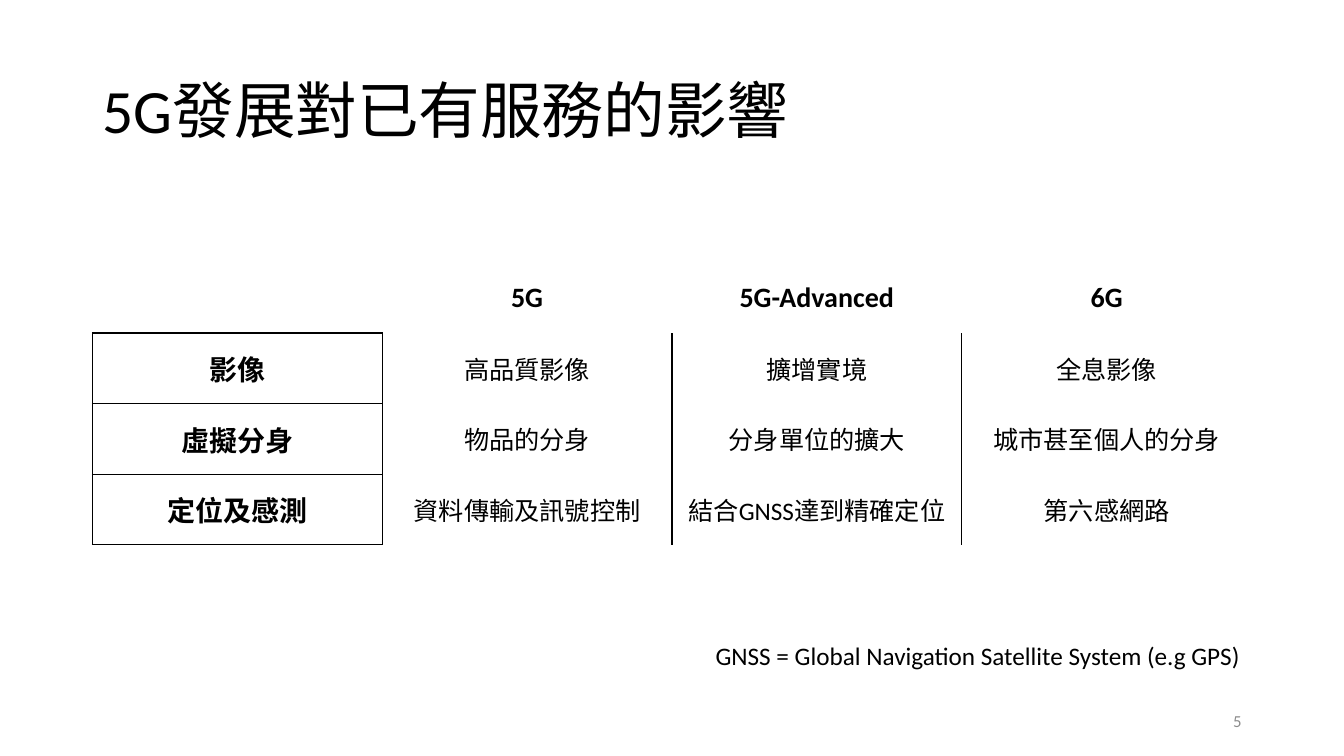
"""Build a slide comparing how 5G, 5G-Advanced and 6G affect existing services."""
from lxml.etree import SubElement
from pptx import Presentation
from pptx.dml.color import RGBColor
from pptx.enum.text import MSO_ANCHOR as ANCHOR, PP_ALIGN as ALIGN
from pptx.oxml.ns import qn
from pptx.util import Pt

COLORS = {"text": "000000", "number": "8C8C8C", "border": "000000"}
ROWS = [
    ["", "5G", "5G-Advanced", "6G"],
    ["影像", "高品質影像", "擴增實境", "全息影像"],
    ["虛擬分身", "物品的分身", "分身單位的擴大", "城市甚至個人的分身"],
    ["定位及感測", "資料傳輸及訊號控制", "結合GNSS達到精確定位", "第六感網路"],
]


def write(tf, text, size, color="text", align=ALIGN.LEFT, bold=False):
    p = tf.paragraphs[0]
    p.text = text
    p.alignment = align
    p.font.name = "Calibri"
    p.font.size = Pt(size)
    p.font.bold = bold
    p.font.color.rgb = RGBColor.from_string(COLORS[color])
    return p


def set_border(cell, side, visible):
    ln = SubElement(cell._tc.get_or_add_tcPr(), qn(f"a:ln{side}"), w=str(Pt(1)))
    if visible:
        fill = SubElement(ln, qn("a:solidFill"))
        SubElement(fill, qn("a:srgbClr"), val=COLORS["border"])
    else:
        SubElement(ln, qn("a:noFill"))


prs = Presentation()
prs.slide_width, prs.slide_height = Pt(960), Pt(540)
s = prs.slides.add_slide(prs.slide_layouts[6])

title = s.shapes.add_textbox(Pt(66), Pt(28.75), Pt(828), Pt(104.4))
tf = title.text_frame
tf.word_wrap = True
tf.vertical_anchor = ANCHOR.MIDDLE
p = write(tf, "5G發展對已有服務的影響", 44)
p.line_spacing = 0.9

number = s.shapes.add_textbox(Pt(678), Pt(500.5), Pt(216), Pt(28.75))
tf = number.text_frame
tf.word_wrap = True
tf.vertical_anchor = ANCHOR.MIDDLE
write(tf, "5", 12, "number", ALIGN.RIGHT)

table = s.shapes.add_table(4, 4, Pt(66), Pt(187.5), Pt(828), Pt(201.6)).table
table.first_row = table.horz_banding = False
for row, texts in enumerate(ROWS):
    table.rows[row].height = Pt(50.4)
    for col, text in enumerate(texts):
        cell = table.cell(row, col)
        heading = row == 0 or col == 0
        cell.vertical_anchor = ANCHOR.MIDDLE
        write(cell.text_frame, text, 20 if heading else 18, align=ALIGN.CENTER, bold=heading)
        set_border(cell, "L", row > 0)
        set_border(cell, "R", row > 0 and col < 3)
        set_border(cell, "T", row > 0 and col == 0)
        set_border(cell, "B", col == 0)
        cell.fill.background()

note = s.shapes.add_textbox(Pt(504), Pt(453.6), Pt(394), Pt(29))
tf = note.text_frame
tf.word_wrap = False
write(tf, "GNSS = Global Navigation Satellite System (e.g GPS)", 18)

prs.save("out.pptx")
